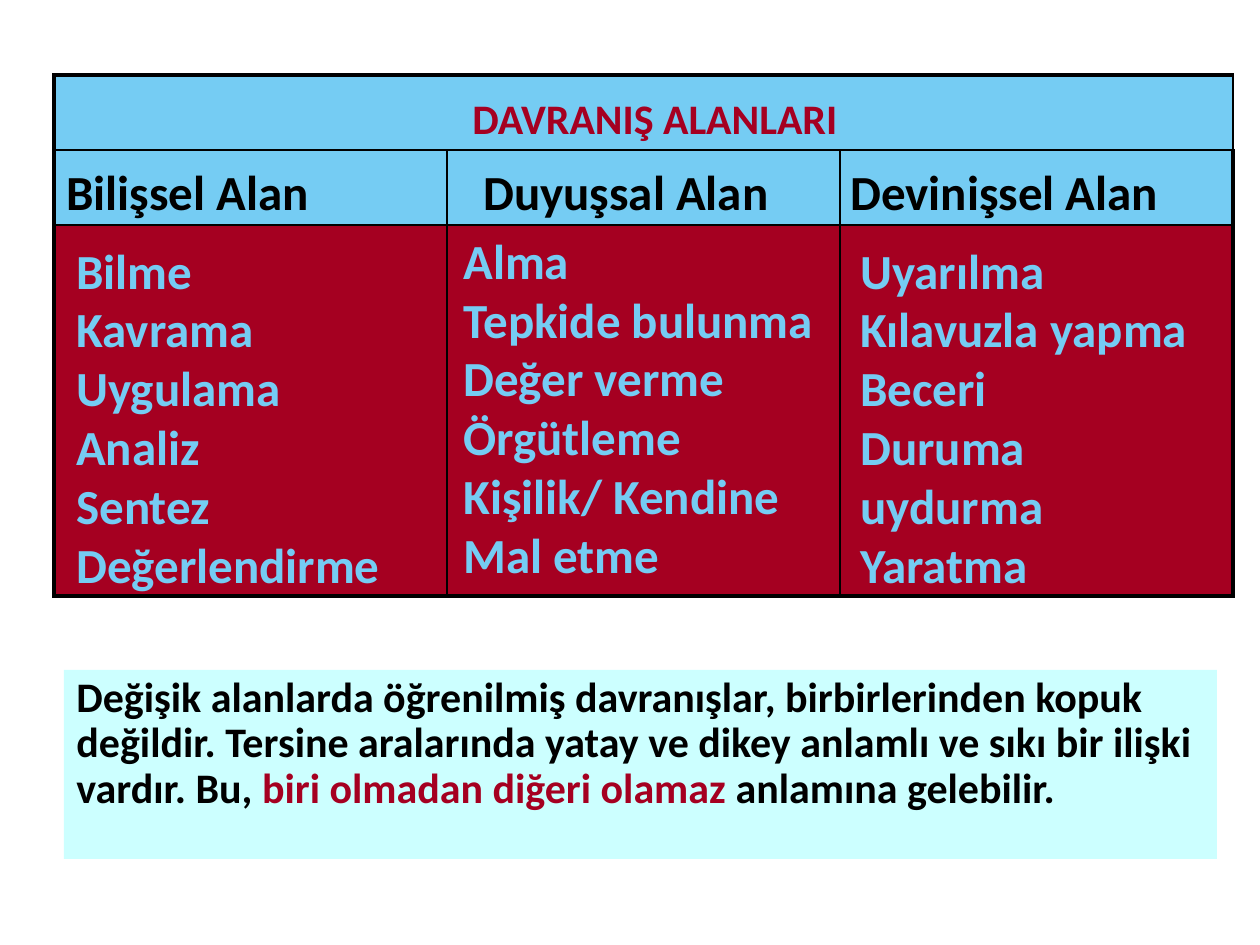
from dataclasses import dataclass

from lxml import etree
from pptx import Presentation
from pptx import util as u
from pptx.dml.color import RGBColor
from pptx.enum import shapes, text
from pptx.oxml import ns


@dataclass(frozen=True)
class Theme:
    font: str = "Calibri"
    sky: str = "75CCF3"
    crimson: str = "A50021"
    mint: str = "CCFFFF"
    ink: str = "000000"
    large: int = 28
    medium: int = 24
    outer_line: float = 2.25
    inner_line: float = 1


THEME = Theme()
EMU_PER_PX = 914400 / 126

HEADING = "DAVRANIŞ ALANLARI"
DOMAINS = [
    ("Bilişsel Alan", (54, 155, 367, 72),
     ["Bilme", "Kavrama", "Uygulama", "Analiz", "Sentez", "Değerlendirme"],
     (64, 234, 367, 365)),
    ("Duyuşsal Alan", (471, 155, 387, 72),
     ["Alma", "Tepkide bulunma", "Değer verme", "Örgütleme",
      "Kişilik/ Kendine Mal etme"],
     (451, 224, 387, 365)),
    ("Devinişsel Alan", (838, 155, 387, 72),
     ["Uyarılma", "Kılavuzla yapma", "Beceri", "Duruma uydurma", "Yaratma"],
     (848, 234, 377, 365)),
]
SUMMARY = [
    ("Değişik alanlarda öğrenilmiş davranışlar, birbirlerinden kopuk değildir. "
     "Tersine aralarında yatay ve dikey anlamlı ve sıkı bir ilişki vardır. Bu, ",
     THEME.ink),
    ("biri olmadan diğeri olamaz", THEME.crimson),
    (" anlamına gelebilir.", THEME.ink),
]


def px(length):
    return u.Emu(round(length * EMU_PER_PX))


def rgb(colour):
    return RGBColor.from_string(colour)


def write(frame, paragraphs, size=THEME.large, colour=THEME.ink,
          align=text.PP_ALIGN.LEFT, spacing=None):
    frame.word_wrap = True
    frame.vertical_anchor = text.MSO_ANCHOR.TOP
    for index, runs in enumerate(paragraphs):
        paragraph = frame.add_paragraph() if index else frame.paragraphs[0]
        paragraph.alignment = align
        paragraph.line_spacing = spacing
        if isinstance(runs, str):
            runs = [(runs, colour)]
        for words, run_colour in runs:
            run = paragraph.add_run()
            run.text = words
            run.font.name = THEME.font
            run.font.size = u.Pt(size)
            run.font.bold = True
            run.font.color.rgb = rgb(run_colour)


def add_label(slide, box, paragraphs, **style):
    label = slide.shapes.add_textbox(*map(px, box))
    write(label.text_frame, paragraphs, **style)
    label.text_frame.auto_size = text.MSO_AUTO_SIZE.SHAPE_TO_FIT_TEXT


def border_cell(cell, widths):
    properties = cell._tc.get_or_add_tcPr()
    for side, width in widths.items():
        line = etree.SubElement(properties, ns.qn(f"a:ln{side}"), w=str(u.Pt(width)))
        fill = etree.SubElement(line, ns.qn("a:solidFill"))
        etree.SubElement(fill, ns.qn("a:srgbClr"), val=THEME.ink)


def add_grid(slide):
    row_heights = [75, 75, 371]
    row_fills = [THEME.sky, THEME.sky, THEME.crimson]
    column_width = 393
    last_row, last_column = len(row_heights) - 1, len(DOMAINS) - 1
    grid = slide.shapes.add_table(
        last_row + 1, last_column + 1, px(54), px(75),
        px(column_width * len(DOMAINS)), px(sum(row_heights))).table
    grid.first_row = grid.horz_banding = False
    for column in grid.columns:
        column.width = px(column_width)
    for r, height in enumerate(row_heights):
        grid.rows[r].height = px(height)
        for c in range(last_column + 1):
            cell = grid.cell(r, c)
            on_edge = {"L": c == 0, "R": c == last_column,
                       "T": r == 0, "B": r == last_row}
            border_cell(cell, {
                side: THEME.outer_line if edge else THEME.inner_line
                for side, edge in on_edge.items()})
            cell.fill.solid()
            cell.fill.fore_color.rgb = rgb(row_fills[r])
    grid.cell(0, 0).merge(grid.cell(0, last_column))


def add_summary(slide):
    panel = slide.shapes.add_shape(
        shapes.MSO_SHAPE.RECTANGLE, *map(px, (64, 670, 1153, 189)))
    panel.shadow.inherit = False
    panel.fill.solid()
    panel.fill.fore_color.rgb = rgb(THEME.mint)
    panel.line.fill.background()
    write(panel.text_frame, [SUMMARY], size=THEME.medium, spacing=0.9)


def place_heading(slide):
    heading = slide.shapes.title
    heading.left, heading.top, heading.width, heading.height = map(
        px, (84, 86, 1142, 63))
    write(heading.text_frame, [HEADING], size=THEME.medium,
          colour=THEME.crimson, align=text.PP_ALIGN.CENTER)
    heading.text_frame.auto_size = text.MSO_AUTO_SIZE.NONE
    heading.element.getparent().append(heading.element)


def main():
    deck = Presentation()
    deck.slide_width, deck.slide_height = px(1260), px(945)
    slide = deck.slides.add_slide(deck.slide_layouts[5])
    add_grid(slide)
    add_summary(slide)
    for name, name_box, steps, steps_box in DOMAINS:
        add_label(slide, steps_box, steps, colour=THEME.sky)
        add_label(slide, name_box, [name])
    place_heading(slide)
    deck.save("out.pptx")


if __name__ == "__main__":
    main()
